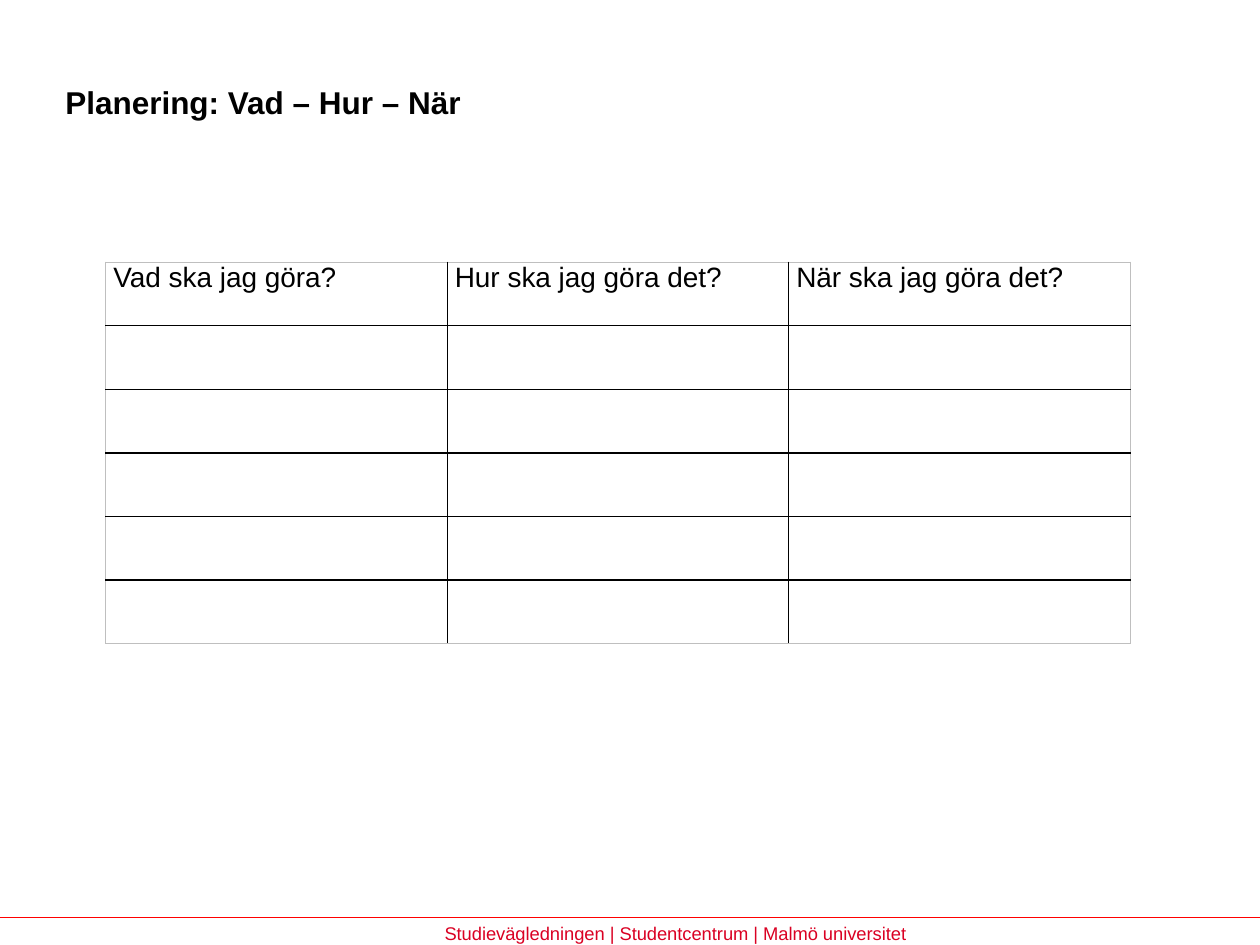
from lxml.etree import SubElement
from pptx import Presentation
from pptx.dml.color import RGBColor
from pptx.enum.text import MSO_ANCHOR
from pptx.oxml.ns import qn
from pptx.util import Inches, Pt

TITLE = "Planering: Vad – Hur – När"
FOOTER = "Studievägledningen | Studentcentrum | Malmö universitet"
QUESTIONS = ["Vad ska jag göra?", "Hur ska jag göra det?", "När ska jag göra det?"]
ROWS = 6
COLUMN_WIDTH, ROW_HEIGHT = 2.71, 0.505
INNER_BORDER = ("000000", 1)
OUTER_BORDER = ("BFBFBF", 0.5)


def color(value):
    return RGBColor.from_string(value)


def write(frame, text, size, ink="000000", bold=False):
    paragraph = frame.paragraphs[0]
    paragraph.text = text
    font = paragraph.font
    font.name, font.size, font.bold = "Arial", Pt(size), bold
    font.color.rgb = color(ink)


def add_text(slide, box, text, size, **style):
    frame = slide.shapes.add_textbox(*map(Inches, box)).text_frame
    frame.word_wrap = True
    write(frame, text, size, **style)
    return frame


def set_borders(cell, row, column):
    edges = {
        "a:lnL": column == 0,
        "a:lnR": column == len(QUESTIONS) - 1,
        "a:lnT": row == 0,
        "a:lnB": row == ROWS - 1,
    }
    properties = cell._tc.get_or_add_tcPr()
    for tag, is_outer in edges.items():
        ink, width = OUTER_BORDER if is_outer else INNER_BORDER
        border = SubElement(properties, qn(tag), w=str(Pt(width)))
        fill = SubElement(border, qn("a:solidFill"))
        SubElement(fill, qn("a:srgbClr"), val=ink)


def add_plan(slide):
    plan = slide.shapes.add_table(
        ROWS, len(QUESTIONS), Inches(0.84), Inches(2.08),
        Inches(COLUMN_WIDTH * len(QUESTIONS)), Inches(ROW_HEIGHT * ROWS),
    ).table
    plan.first_row = plan.horz_banding = False
    for row in range(ROWS):
        for column, question in enumerate(QUESTIONS):
            cell = plan.cell(row, column)
            cell.margin_left = cell.margin_right = Inches(0.06)
            cell.margin_top = cell.margin_bottom = 0
            set_borders(cell, row, column)
            cell.fill.background()
            write(cell.text_frame, question if row == 0 else "", 16)


def main():
    deck = Presentation()
    deck.slide_width, deck.slide_height = Inches(10), Inches(7.5)
    slide = deck.slides.add_slide(deck.slide_layouts[6])

    title = add_text(slide, (0.42, 0.18, 7.09, 1.25), TITLE, 18, bold=True)
    title.vertical_anchor = MSO_ANCHOR.MIDDLE

    rule = slide.shapes.add_connector(1, Inches(10), Inches(7.28), 0, Inches(7.28))
    rule.line.color.rgb = color("FF0000")
    rule.line.width = Pt(0.75)
    SubElement(rule._element.spPr, qn("a:effectLst"))

    add_text(slide, (3.43, 7.27, 6.2, 0.29), FOOTER, 10.5, ink="DA0123")
    add_plan(slide)
    deck.save("out.pptx")


if __name__ == "__main__":
    main()
